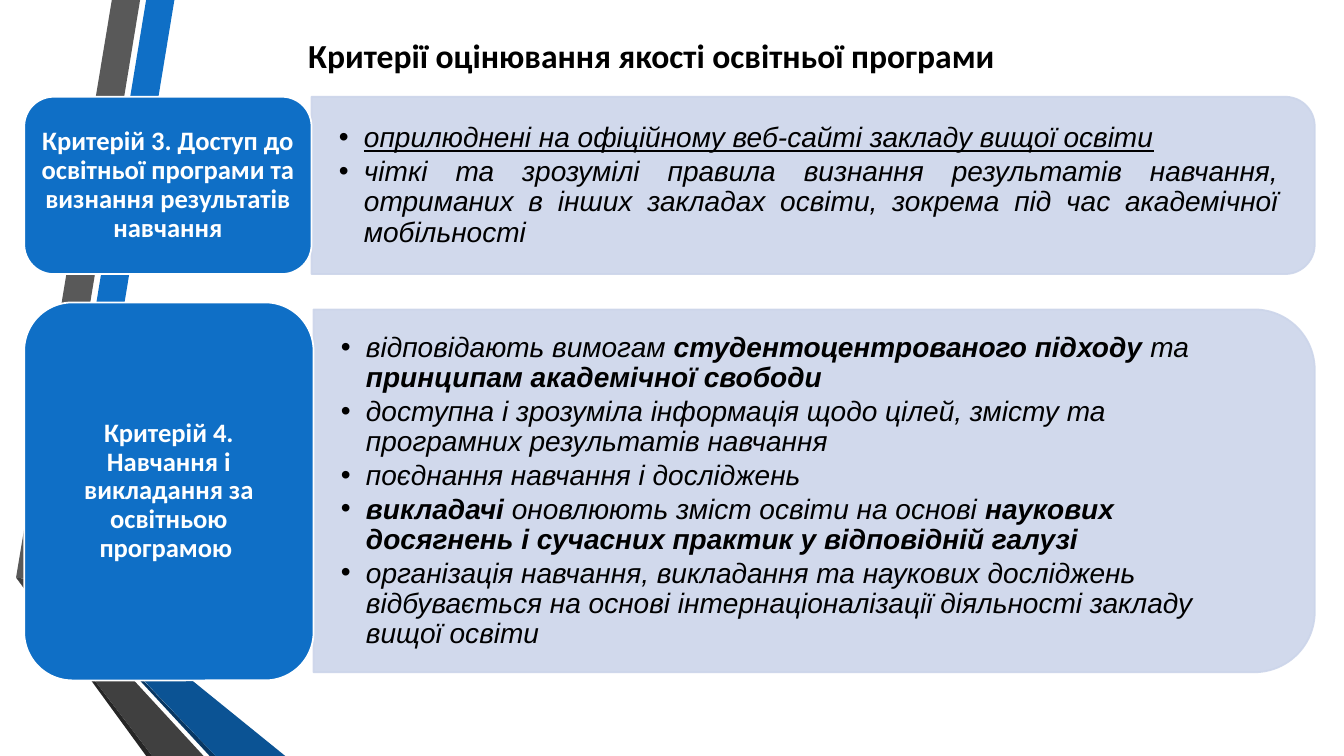
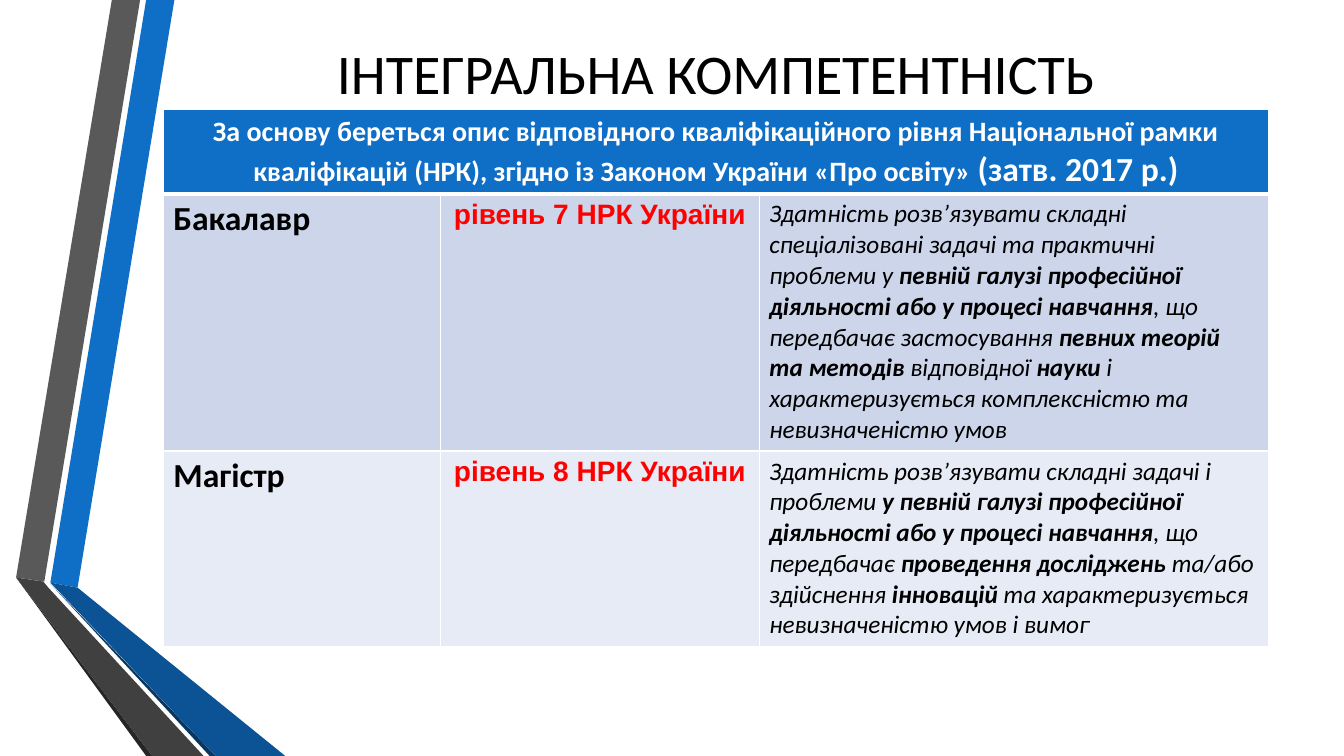
from pptx import Presentation
from pptx import util as u
from pptx.dml.color import RGBColor
from pptx.enum import shapes as sh, text as tx
from pptx.oxml import parse_xml
from pptx.oxml.ns import nsdecls, qn

PX = 9144  # EMU in one px, 100 px to the inch
WIDE, HIGH = 1333, 750
BLUE, PALE, LIGHT = "0F6FC6", "CCD5EA", "E7EBF5"
BLACK, WHITE, RED = "000000", "FFFFFF", "FF0000"
MID, LEFT, JUST = tx.PP_ALIGN.CENTER, tx.PP_ALIGN.LEFT, tx.PP_ALIGN.JUSTIFY
KIND = sh.MSO_SHAPE

# Ribbons shared by both slides: colour, corner points
BANDS = [
    (BLUE, [(50, 578), (77, 583), (173, 0), (145, 0)]),
    ("595959", [(139, 0), (111, 0), (16, 573), (44, 577)]),
    ("262626", [(16, 573), (145, 750), (151, 750)]),
    ("083763", [(50, 579), (208, 750), (214, 750)]),
    ("0B5394", [(50, 578), (214, 750), (283, 750), (77, 583)]),
    ("404040", [(202, 750), (48, 583), (43, 577), (16, 573), (151, 750)]),
]

# Content; *stars* mark a switch of bold
HEAD = "Критерії оцінювання якості освітньої програми "
CARDS = [
    dict(
        name="Критерій 3. Доступ до освітньої програми та визнання результатів навчання",
        label=(24, 96, 285, 176), panel=(309, 96, 995, 176),
        body=(309, 105, 986, 159), align=JUST, under=True,
        points=[
            "оприлюднені на офіційному веб-сайті закладу вищої освіти",
            "чіткі та зрозумілі правила визнання результатів навчання, отриманих "
            "в інших закладах освіти, зокрема під час академічної мобільності",
        ]),
    dict(
        name="Критерій 4. Навчання і викладання за освітньою програмою ",
        label=(24, 300, 287, 375), panel=(311, 307, 993, 360),
        body=(311, 325, 975, 325), align=LEFT, under=False,
        points=[
            "відповідають вимогам *студентоцентрованого підходу *та "
            "*принципам академічної свободи*",
            "доступна і зрозуміла інформація щодо цілей, змісту та "
            "програмних результатів навчання",
            "поєднання навчання і досліджень",
            "*викладачі* оновлюють зміст освіти на основі *наукових "
            "досягнень і сучасних практик у відповідній галузі*",
            "організація навчання, викладання та наукових досліджень відбувається "
            "на основі інтернаціоналізації діяльності закладу вищої освіти",
        ]),
]
TOPIC = "ІНТЕГРАЛЬНА КОМПЕТЕНТНІСТЬ"
BASIS = ("За основу береться опис відповідного кваліфікаційного рівня Національної "
         "рамки кваліфікацій (НРК), згідно із Законом України «Про освіту» "
         "*(затв. 2017 р.)")
LEVELS = [
    ("Бакалавр", "рівень 7 НРК України",
     "Здатність розв’язувати складні спеціалізовані задачі та практичні проблеми "
     "у *певній галузі професійної діяльності або у процесі навчання*, що передбачає "
     "застосування *певних теорій та методів* відповідної *науки* і характеризується "
     "комплексністю та невизначеністю умов"),
    ("Магістр", "рівень 8 НРК України",
     "Здатність розв’язувати складні задачі і проблеми *у певній галузі професійної "
     "діяльності або у процесі навчання*, що передбачає *проведення досліджень *та/або "
     "здійснення* інновацій *та характеризується невизначеністю умов і вимог"),
]
COLS, ROWS = (275, 316, 505), (83, 255, 194)


def rgb(code):
    return RGBColor.from_string(code)


def scale(*nums):
    return [u.Emu(int(n * PX)) for n in nums]


def write(frame, paras, size, color, font="Calibri", align=MID, bold=False, italic=False):
    """Fill a frame; pieces between stars are bold."""
    frame.word_wrap = True
    for i, line in enumerate(paras):
        par = frame.add_paragraph() if i else frame.paragraphs[0]
        par.alignment = align
        for j, piece in enumerate(line.split("*")):
            if piece:
                run = par.add_run()
                run.text = piece
                face = run.font
                face.size, face.name = u.Pt(size), font
                face.bold, face.italic = bold or j % 2 == 1, italic
                face.color.rgb = rgb(color)


def inset(frame, side, top):
    frame.margin_left = frame.margin_right = side * PX
    frame.margin_top = frame.margin_bottom = top * PX
    frame.vertical_anchor = tx.MSO_ANCHOR.MIDDLE


def paint(shape, fill, line=None):
    shape.shadow.inherit = False
    shape.fill.solid()
    shape.fill.fore_color.rgb = rgb(fill)
    if line:
        shape.line.color.rgb = rgb(line)
        shape.line.width = u.Pt(1.25)
    else:
        shape.line.fill.background()


def textbox(slide, box):
    return slide.shapes.add_textbox(*scale(*box)).text_frame


def start(deck, title, box, size, bold):
    """New slide with ribbons and title."""
    slide = deck.slides.add_slide(deck.slide_layouts[6])
    for color, dots in BANDS:
        pen = slide.shapes.build_freeform(*dots[0], scale=PX)
        pen.add_line_segments(dots[1:], close=True)
        paint(pen.convert_to_shape(), color)
    frame = textbox(slide, box)
    inset(frame, 10, 5)
    write(frame, [title], size, BLACK, bold=bold)
    return slide


def panel(slide, box):
    """Pale plate, turned so that its round corners face right."""
    x, y, w, h = box
    plate = slide.shapes.add_shape(
        KIND.ROUND_2_SAME_RECTANGLE,
        *scale(x + (w - h) / 2, y + (h - w) / 2, h, w))
    plate.rotation = 90
    paint(plate, PALE, PALE)
    for tone in plate._element.spPr.iter(qn("a:srgbClr")):
        tone.append(parse_xml(f'<a:alpha {nsdecls("a")} val="90000"/>'))


def bullet(par):
    par.line_spacing, par.space_after = 0.9, u.Pt(2.5)
    props = par._p.get_or_add_pPr()
    props.set("marL", str(25 * PX))
    props.set("indent", str(-25 * PX))
    props.append(parse_xml(f'<a:buFont {nsdecls("a")} typeface="Arial"/>'))
    props.append(parse_xml(f'<a:buChar {nsdecls("a")} char="•"/>'))


def card(slide, item):
    panel(slide, item["panel"])
    frame = textbox(slide, item["body"])
    inset(frame, 27, 14)
    write(frame, item["points"], 20, BLACK, "Arial", item["align"], italic=True)
    for par in frame.paragraphs:
        bullet(par)
    if item["under"]:
        frame.paragraphs[0].runs[0].font.underline = True
    label = slide.shapes.add_shape(KIND.ROUNDED_RECTANGLE, *scale(*item["label"]))
    paint(label, BLUE, WHITE)
    inset(label.text_frame, 8, 4)
    write(label.text_frame, [item["name"]], 19, WHITE, bold=True)
    label.text_frame.paragraphs[0].line_spacing = 0.9


def dress(cell, fill, top, base):
    """White borders, then the fill."""
    props = cell._tc.get_or_add_tcPr()
    for side, wide in zip("LRTB", (1, 1, top, base)):
        props.append(parse_xml(
            f'<a:ln{side} {nsdecls("a")} w="{wide * 12700}"><a:solidFill>'
            f'<a:srgbClr val="{WHITE}"/></a:solidFill></a:ln{side}>'))
    cell.fill.solid()
    cell.fill.fore_color.rgb = rgb(fill)


def grid(slide):
    table = slide.shapes.add_table(
        len(ROWS), len(COLS), *scale(162, 109, sum(COLS), sum(ROWS))).table
    table.first_row = table.horz_banding = False
    for col, wide in zip(table.columns, COLS):
        col.width = wide * PX
    edges = [(BLUE, 1, 3), (PALE, 3, 1), (LIGHT, 1, 1)]
    for row, high, look in zip(table.rows, ROWS, edges):
        row.height = high * PX
        for cell in row.cells:
            dress(cell, *look)
    # Heading across all columns
    top = table.cell(0, 0)
    top.merge(table.cell(0, len(COLS) - 1))
    write(top.text_frame, [BASIS], 20, WHITE, bold=True)
    top.text_frame.paragraphs[0].runs[-1].font.size = u.Pt(24)
    # One row for each degree
    styles = [dict(size=24, color=BLACK, align=LEFT, bold=True),
              dict(size=20, color=RED, font="Arial", bold=True),
              dict(size=18, color=BLACK, align=LEFT, italic=True)]
    for r, level in enumerate(LEVELS, 1):
        for c, (words, style) in enumerate(zip(level, styles)):
            write(table.cell(r, c).text_frame, [words], **style)


def main():
    deck = Presentation()
    deck.slide_width, deck.slide_height = scale(WIDE, HIGH)
    # Slide 1: criteria
    slide = start(deck, HEAD, (75, 14, 1150, 82), 24, True)
    for item in CARDS:
        card(slide, item)
    # Slide 2: competence table
    grid(start(deck, TOPIC, (162, -24, 1096, 192), 40, False))
    deck.save("out.pptx")


if __name__ == "__main__":
    main()
